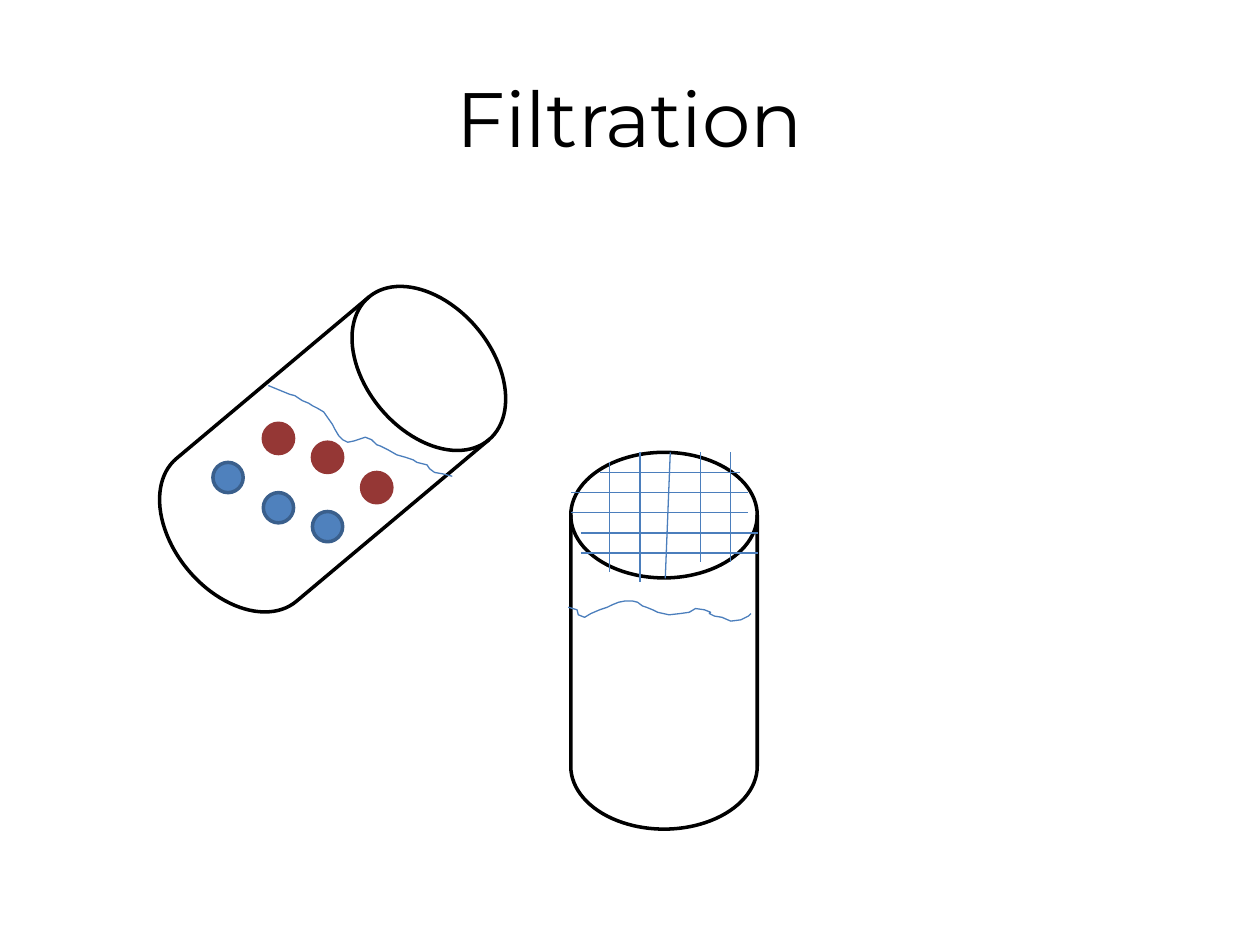
from lxml import etree
from pptx import Presentation
from pptx.dml.color import RGBColor
from pptx.enum.shapes import MSO_CONNECTOR, MSO_SHAPE
from pptx.enum.text import MSO_ANCHOR, PP_ALIGN
from pptx.oxml.ns import qn
from pptx.util import Inches, Pt

DISK, OVAL = MSO_SHAPE.FLOWCHART_MAGNETIC_DISK, MSO_SHAPE.OVAL
STRAIGHT = MSO_CONNECTOR.STRAIGHT

COLOURS = {
    "text": "000000", "glass": "FFFFFF", "outline": "000000", "water": "4B7EBC",
    "red": "953735", "blue": "4F81BD", "blue edge": "3A5F8C",
}

# Content, in inches
TITLE = "Filtration"
BEAKER_SIZE = (1.48, 2.99)
BEAKERS = [(1.9, 2.07, 50), (4.53, 3.59, 0)]  # left, top, rotation
PARTICLE_SIZE = 0.24
PARTICLES = [  # fill, edge, (left, top) of each
    ("red", "red", [(2.09, 3.36), (2.48, 3.51), (2.87, 3.75)]),
    ("blue", "blue edge", [(1.69, 3.67), (2.09, 3.91), (2.48, 4.06)]),
]
WATER_LEVELS = [
    [(4.51, 4.82), (4.58, 4.84), (4.59, 4.88), (4.64, 4.9), (4.69, 4.87),
     (4.76, 4.84), (4.82, 4.82), (4.86, 4.8), (4.91, 4.78), (4.96, 4.77),
     (5.02, 4.77), (5.06, 4.78), (5.1, 4.81), (5.13, 4.82), (5.18, 4.84),
     (5.22, 4.86), (5.31, 4.88), (5.4, 4.87), (5.47, 4.86), (5.52, 4.83),
     (5.59, 4.84), (5.64, 4.86), (5.63, 4.87), (5.67, 4.89), (5.73, 4.9),
     (5.8, 4.93), (5.88, 4.92), (5.94, 4.89), (5.96, 4.87)],
    [(2.13, 3.06), (2.3, 3.13), (2.34, 3.14), (2.4, 3.18), (2.45, 3.2),
     (2.48, 3.22), (2.52, 3.24), (2.57, 3.27), (2.64, 3.37), (2.66, 3.41),
     (2.69, 3.46), (2.72, 3.49), (2.76, 3.51), (2.81, 3.5), (2.87, 3.48),
     (2.9, 3.47), (2.95, 3.49), (2.99, 3.53), (3.02, 3.54), (3.08, 3.57),
     (3.15, 3.61), (3.22, 3.63), (3.28, 3.65), (3.31, 3.67), (3.39, 3.69),
     (3.41, 3.72), (3.45, 3.75), (3.51, 3.76), (3.55, 3.77), (3.59, 3.78)],
]
# Filter mesh: evenly spaced threads, each with its own ends
MESH_LEFT, MESH_TOP = 4.84, 3.75
COLUMN_GAP, ROW_GAP = 0.24, 0.16
COLUMNS = [(3.67, 4.54, 0), (3.59, 4.62, 0), (3.59, 4.59, -0.04),
           (3.59, 4.46, 0), (3.59, 4.46, 0)]  # top, bottom, slant
ROWS = [(4.76, 5.87), (4.53, 5.94), (4.53, 5.94), (4.61, 6.02), (4.61, 6.02)]


def colour(name):
    return RGBColor.from_string(COLOURS[name])


def set_line(part, name, width):
    part.line.color.rgb = colour(name)
    part.line.width = Pt(width)


def add_solid(slide, kind, left, top, width, height, fill, edge):
    solid = slide.shapes.add_shape(kind, *map(Inches, (left, top, width, height)))
    solid.shadow.inherit = False
    solid.fill.solid()
    solid.fill.fore_color.rgb = colour(fill)
    set_line(solid, edge, 2)
    return solid


def add_water(slide, points):
    start, *others = [(Inches(x), Inches(y)) for x, y in points]
    builder = slide.shapes.build_freeform(*start)
    builder.add_line_segments(others, close=False)
    surface = builder.convert_to_shape()
    surface.shadow.inherit = False
    surface.fill.background()
    set_line(surface, "water", 0.75)


def add_thread(slide, *ends):
    thread = slide.shapes.add_connector(STRAIGHT, *map(Inches, ends))
    set_line(thread, "water", 0.75)
    etree.SubElement(thread._element.spPr, qn("a:effectLst"))


def main():
    prs = Presentation()
    prs.slide_width, prs.slide_height = Inches(10), Inches(7.5)
    slide = prs.slides.add_slide(prs.slide_layouts[5])

    # Title
    title = slide.shapes.title
    title.left, title.top, title.width, title.height = map(Inches, (0.5, 0.3, 9, 1.25))
    frame = title.text_frame
    frame.text = TITLE
    frame.vertical_anchor = MSO_ANCHOR.MIDDLE
    heading = frame.paragraphs[0]
    heading.alignment = PP_ALIGN.CENTER
    font = heading.runs[0].font
    font.name, font.size = "Montserrat", Pt(44)
    font.color.rgb = colour("text")

    # Beakers and their water
    for left, top, rotation in BEAKERS:
        beaker = add_solid(slide, DISK, left, top, *BEAKER_SIZE, "glass", "outline")
        beaker.rotation = rotation
    for points in WATER_LEVELS:
        add_water(slide, points)

    # Particles
    for fill, edge, places in PARTICLES:
        for left, top in places:
            add_solid(slide, OVAL, left, top, PARTICLE_SIZE, PARTICLE_SIZE, fill, edge)

    # Filter mesh
    for i, (top, bottom, slant) in enumerate(COLUMNS):
        x = MESH_LEFT + i * COLUMN_GAP
        add_thread(slide, x, top, x + slant, bottom)
    for i, (left, right) in enumerate(ROWS):
        y = MESH_TOP + i * ROW_GAP
        add_thread(slide, left, y, right, y)

    prs.save("out.pptx")


if __name__ == "__main__":
    main()
